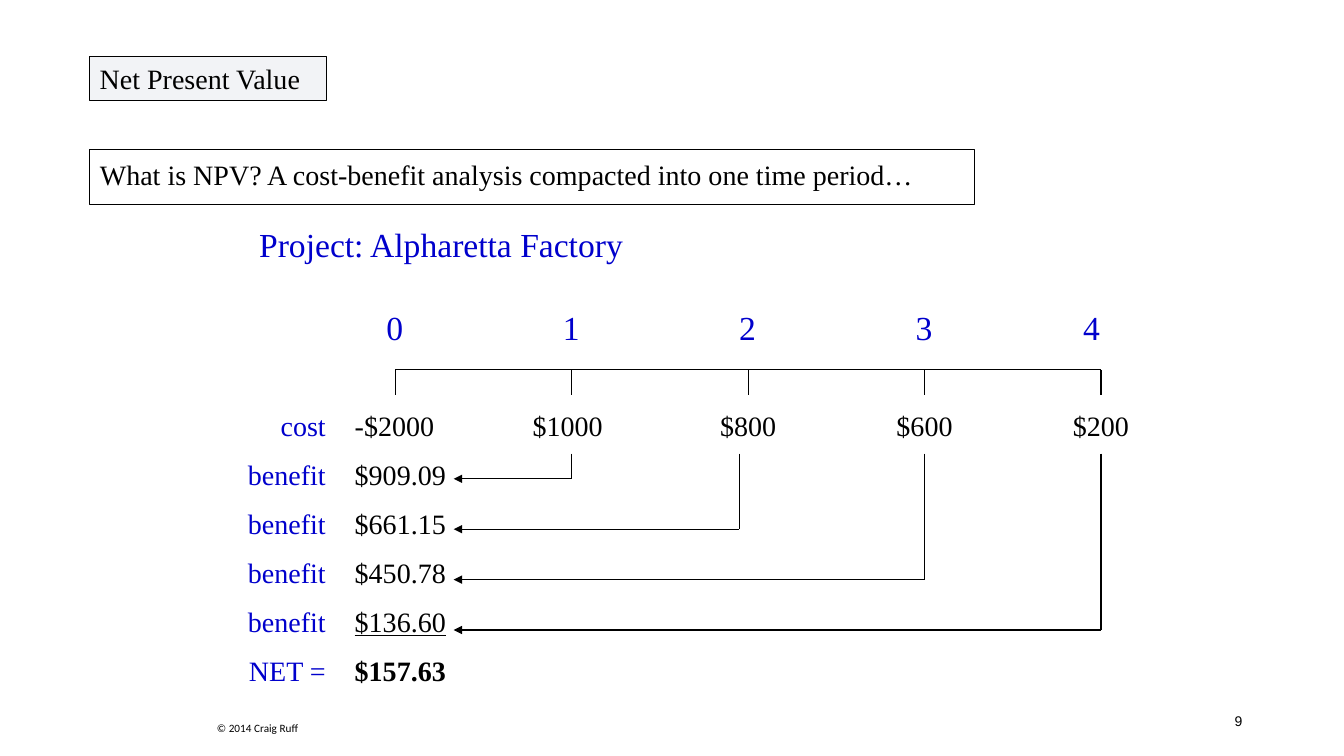
from lxml import etree
from pptx import Presentation
from pptx import util as u
from pptx.dml.color import RGBColor
from pptx.enum import shapes, text
from pptx.oxml.ns import qn

BLACK, BLUE, NAVY = "000000", "0000CC", "002060"
LEFT, CENTER, RIGHT = text.PP_ALIGN.LEFT, text.PP_ALIGN.CENTER, text.PP_ALIGN.RIGHT

presentation = Presentation()
presentation.slide_width, presentation.slide_height = u.Inches(13.33), u.Inches(7.5)
slide = presentation.slides.add_slide(presentation.slide_layouts[5])


def write(content, left, top, width, height, shape=None, size=20, color=BLACK,
          font="Times New Roman", align=LEFT, anchor=text.MSO_ANCHOR.TOP):
    """Write one paragraph per line of content into shape, or into a new text box."""
    box = [u.Inches(value) for value in (left, top, width, height)]
    if shape is None:
        shape = slide.shapes.add_textbox(*box)
    shape.left, shape.top, shape.width, shape.height = box
    frame = shape.text_frame
    frame.text = content
    frame.word_wrap = True
    frame.auto_size = text.MSO_AUTO_SIZE.NONE
    frame.vertical_anchor = anchor
    for index, paragraph in enumerate(frame.paragraphs):
        paragraph.alignment = align
        paragraph.space_before = u.Pt(11 if index else 0)
        paragraph.font.size = u.Pt(size)
        paragraph.font.name = font
        paragraph.font.color.rgb = RGBColor.from_string(color)
    return shape


def draw_line(x1, y1, x2, y2, arrow=False):
    line = slide.shapes.add_connector(
        shapes.MSO_CONNECTOR.STRAIGHT, *[u.Inches(value) for value in (x1, y1, x2, y2)])
    line.line.color.rgb = RGBColor.from_string(BLACK)
    line.line.width = u.Pt(0.75)
    properties = line.element.spPr
    if arrow:
        etree.SubElement(properties.find(qn("a:ln")), qn("a:tailEnd"), type="triangle")
    etree.SubElement(properties, qn("a:effectLst"))


# Headings
title = write("What is NPV? A cost-benefit analysis compacted into one time period…",
              0.89, 1.48, 8.78, 0.55, shape=slide.shapes.title,
              anchor=text.MSO_ANCHOR.MIDDLE)
title.text_frame.paragraphs[0].line_spacing = 0.9
topic = slide.shapes.add_shape(shapes.MSO_SHAPE.RECTANGLE, 0, 0, 0, 0)
topic.shadow.inherit = False
topic.fill.solid()
topic.fill.fore_color.rgb = RGBColor.from_string(NAVY)
tint = topic.element.spPr.find(qn("a:solidFill"))[0]
etree.SubElement(tint, qn("a:alpha"), val="5000")
write("Net Present Value", 0.89, 0.56, 2.35, 0.44, shape=topic)
for framed in (title, topic):
    framed.line.color.rgb = RGBColor.from_string(BLACK)
    framed.line.width = u.Pt(0.75)
write("Project: Alpharetta Factory", 2.25, 2.17, 4.25, 0.5, size=24, color=BLUE, align=CENTER)

# Timeline: one column per year
FIRST_YEAR, YEAR_STEP = 3.92, 1.75
AXIS_TOP, TICK = 3.67, 0.25
years = [FIRST_YEAR + YEAR_STEP * year for year in range(5)]
label_centers = years[:4] + [10.83]
draw_line(years[0], AXIS_TOP, years[-1], AXIS_TOP)
for year, (x, center) in enumerate(zip(years, label_centers)):
    draw_line(x, AXIS_TOP, x, AXIS_TOP + TICK)
    write(str(year), center - 0.42, 3, 0.83, 0.5, size=24, color=BLUE, align=CENTER)

# Cash flows, each discounted back to year 0
flows = [("$1000", 5.63, years[1]), ("$800", years[2], 7.33),
         ("$600", years[3], years[3]), ("$200", years[4], years[4])]
ARROW_TOP, ARROW_STEP, ARROW_TIP = 4.5, 0.5, 4.5
for row, (amount, center, x) in enumerate(flows):
    write(amount, center - 0.6, 4, 1.2, 0.43, align=CENTER)
    y = ARROW_TOP + TICK + ARROW_STEP * row
    draw_line(x, ARROW_TOP, x, y)
    draw_line(x, y, ARROW_TIP, y, arrow=True)

# Present values
write("\n".join(["cost"] + ["benefit"] * 4 + ["NET ="]), 2.08, 4, 1.25, 3.03,
      color=BLUE, align=RIGHT)
values = write("-$2000\n$909.09\n$661.15\n$450.78\n$136.60\n$157.63", 3.42, 4, 1.5, 3.03)
last_benefit, net = values.text_frame.paragraphs[-2:]
last_benefit.runs[0].font.underline = True
net.runs[0].font.bold = True

# Footer
write("9", 9.42, 6.95, 3, 0.4, size=10, font="Arial", align=RIGHT,
      anchor=text.MSO_ANCHOR.MIDDLE)
write("© 2014 Craig Ruff", 1.95, 7.11, 1.21, 0.24, size=8, font="Calibri", align=CENTER)

presentation.save("out.pptx")
